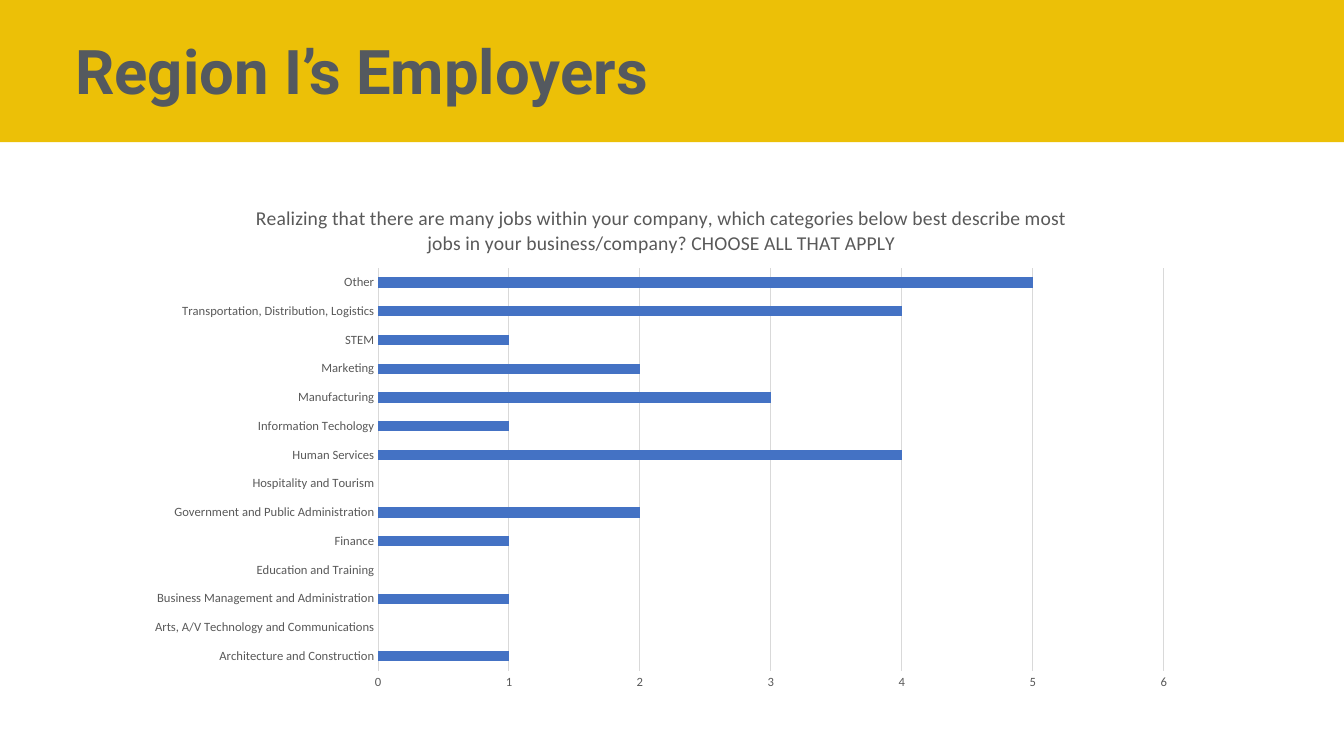
from pptx import Presentation
from pptx.chart.data import CategoryChartData
from pptx.dml.color import RGBColor
from pptx.enum import chart as charts, shapes, text
from pptx.oxml import parse_xml
from pptx.oxml.ns import nsdecls, qn
from pptx.util import Inches, Pt

GOLD = RGBColor(0xEC, 0xC0, 0x07)
SLATE = RGBColor(0x54, 0x59, 0x5F)
GRAY = RGBColor(0x59, 0x59, 0x59)
GRID = RGBColor(0xD9, 0xD9, 0xD9)
BLUE = RGBColor(0x44, 0x72, 0xC4)

JOBS = [
    ("Architecture and Construction", 1),
    ("Arts, A/V Technology and Communications", None),
    ("Business Management and Administration", 1),
    ("Education and Training", None),
    ("Finance", 1),
    ("Government and Public Administration", 2),
    ("Hospitality and Tourism", None),
    ("Human Services", 4),
    ("Information Techology", 1),
    ("Manufacturing", 3),
    ("Marketing", 2),
    ("STEM", 1),
    ("Transportation, Distribution, Logistics", 4),
    ("Other", 5),
]
QUESTION = (
    "Realizing that there are many jobs within your company, which categories "
    "below best describe most jobs in your business/company? CHOOSE ALL THAT APPLY"
)


def set_font(font, name, size, color, bold=False):
    font.name, font.size, font.bold = name, Pt(size), bold
    font.color.rgb = color


def place(part, index, **fractions):
    """Fix a chart part's position, given as fractions of the chart's size."""
    for old in part.findall(qn("c:layout")):
        part.remove(old)
    target = '<c:layoutTarget val="inner"/>' if "w" in fractions else ""
    modes = "".join(f'<c:{key}Mode val="edge"/>' for key in "xy")
    sizes = "".join(f'<c:{key} val="{value}"/>' for key, value in fractions.items())
    part.insert(index, parse_xml(
        f'<c:layout {nsdecls("c")}><c:manualLayout>{target}{modes}{sizes}'
        '</c:manualLayout></c:layout>'))


deck = Presentation()
deck.slide_width, deck.slide_height = Inches(13.33), Inches(7.5)
page = deck.slides.add_slide(deck.slide_layouts[6])

# Header band and heading
band = page.shapes.add_shape(
    shapes.MSO_SHAPE.RECTANGLE, 0, 0, deck.slide_width, Inches(1.41))
band.shadow.inherit = False
band.fill.solid()
band.fill.fore_color.rgb = GOLD
band.line.fill.background()

box = page.shapes.add_textbox(Inches(0.65), Inches(0.36), Inches(11.5), Inches(1.15))
box.text_frame.word_wrap = True
box.text_frame.vertical_anchor = text.MSO_ANCHOR.TOP
heading = box.text_frame.paragraphs[0]
heading.text = "Region I’s Employers"
heading.line_spacing = 0.9
set_font(heading.font, "Roboto", 44, SLATE, bold=True)

# Survey chart
survey = CategoryChartData()
survey.categories = [job for job, count in JOBS]
survey.add_series("Series 1", [count for job, count in JOBS])
chart = page.shapes.add_chart(
    charts.XL_CHART_TYPE.BAR_CLUSTERED,
    Inches(1.36), Inches(1.79), Inches(10.39), Inches(5.12), survey).chart
set_font(chart.font, "Calibri", 10, GRAY)
chart.has_legend = False

chart.has_title = True
question = chart.chart_title.text_frame.paragraphs[0]
question.text = QUESTION
set_font(question.font, "Calibri", 14, GRAY)
chart.chart_title.include_in_layout = False
place(chart.chart_title._element, 1, x=0.11, y=0.04)
place(chart.plots[0]._element.getparent(), 0, x=0.23, y=0.17, w=0.75, h=0.78)

bars = chart.plots[0]
bars.gap_width = 182
bars.vary_by_categories = False
bars.series[0].format.fill.solid()
bars.series[0].format.fill.fore_color.rgb = BLUE

for axis in (chart.category_axis, chart.value_axis):
    axis.major_tick_mark = axis.minor_tick_mark = charts.XL_TICK_MARK.NONE
    set_font(axis.tick_labels.font, "Calibri", 9, GRAY)

counts = chart.value_axis
counts.minimum_scale, counts.maximum_scale, counts.major_unit = 0, 6, 1
counts.has_major_gridlines = True
counts.format.line.fill.background()
for line in (chart.category_axis.format.line, counts.major_gridlines.format.line):
    line.color.rgb = GRID
    line.width = Pt(0.75)

deck.save("out.pptx")
